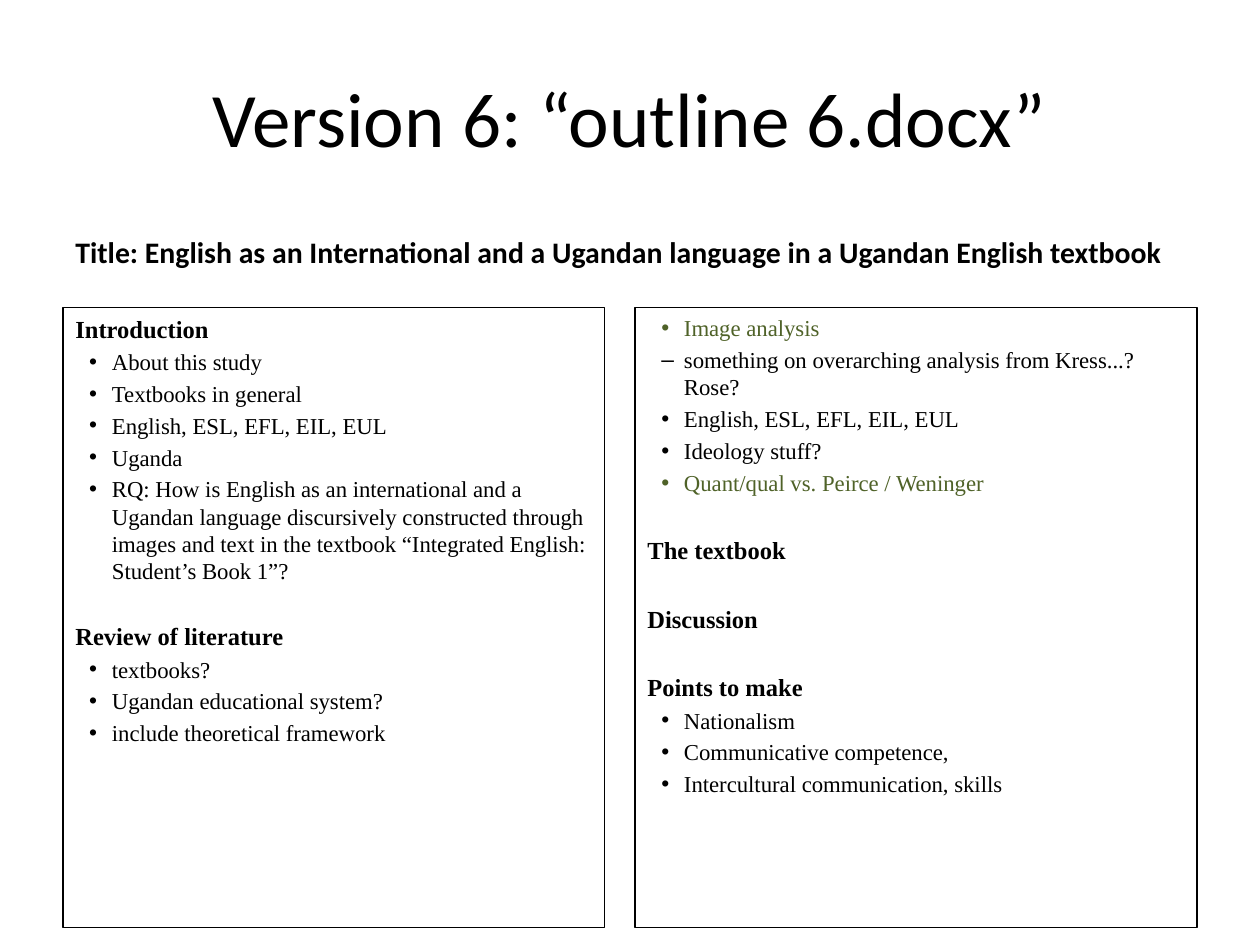
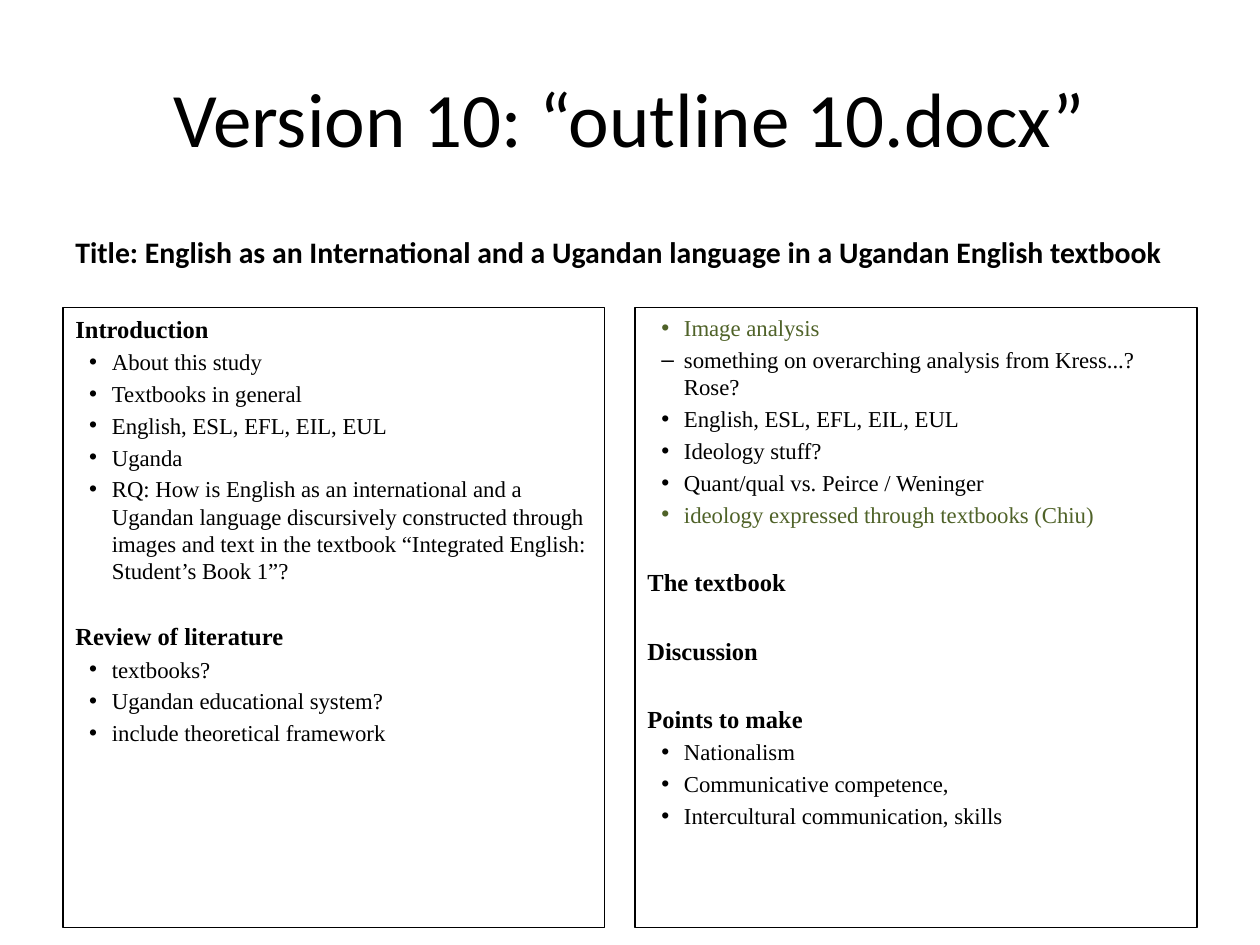
from lxml import etree
from pptx import Presentation
from pptx.dml.color import RGBColor
from pptx.enum.shapes import MSO_SHAPE
from pptx.enum.text import MSO_ANCHOR, PP_ALIGN
from pptx.oxml.ns import qn
from pptx.util import Emu, Inches, Pt

RECTANGLE = MSO_SHAPE.RECTANGLE
TOP, MIDDLE = MSO_ANCHOR.TOP, MSO_ANCHOR.MIDDLE
LEFT, CENTER = PP_ALIGN.LEFT, PP_ALIGN.CENTER
COLUMNS, ROWS = 20, 15
BLACK, GREEN = "000000", "4F6228"
HEADING, POINT, DASH, NEW_POINT = "heading", "point", "dash", "new point"

WORKING_TITLE = ("Title: English as an International and a Ugandan language "
                 "in a Ugandan English textbook")
OPENING_SECTIONS = [
    (HEADING, "Introduction"),
    (POINT, "About this study"),
    (POINT, "Textbooks in general"),
    (POINT, "English, ESL, EFL, EIL, EUL"),
    (POINT, "Uganda"),
    (POINT, "RQ: How is English as an international and a Ugandan language "
            "discursively constructed through images and text in the textbook "
            "“Integrated English: Student’s Book 1”?"),
    (HEADING, "Review of literature"),
    (POINT, "textbooks?"),
    (POINT, "Ugandan educational system?"),
    (POINT, "include theoretical framework"),
]
THEORY = [
    (NEW_POINT, "Image analysis"),
    (DASH, "something on overarching analysis from Kress...? Rose?"),
    (POINT, "English, ESL, EFL, EIL, EUL"),
    (POINT, "Ideology stuff?"),
]
CLOSING_SECTIONS = [
    (HEADING, "The textbook"),
    (HEADING, "Discussion"),
    (HEADING, "Points to make"),
    (POINT, "Nationalism"),
    (POINT, "Communicative competence,"),
    (POINT, "Intercultural communication, skills"),
]
COMPARISON = "Quant/qual vs. Peirce / Weninger"
VERSIONS = [
    (6, [(NEW_POINT, COMPARISON)]),
    (10, [(POINT, COMPARISON),
          (NEW_POINT, "ideology expressed through textbooks (Chiu)")]),
]


def color(value):
    """Turn a hex string into a colour."""
    return RGBColor.from_string(value)


class OutlineDeck:
    """Hold the deck's style and its current slide."""

    title_font = "Calibri"
    outline_font = "Times New Roman"
    heading_size, point_size = 14, 13
    paragraph_gap = 0.2

    def __init__(self):
        """Start an empty deck of ten by seven and a half inches."""
        self.deck = Presentation()
        self.deck.slide_width = Inches(10)
        self.deck.slide_height = Inches(7.5)
        self.slide = None

    def new_slide(self):
        """Add a blank slide and make it current."""
        self.slide = self.deck.slides.add_slide(self.deck.slide_layouts[6])

    def place(self, column, row, columns, rows):
        """Convert grid cells to a left, top, width and height."""
        across = self.deck.slide_width / COLUMNS
        down = self.deck.slide_height / ROWS
        return [Emu(round(length)) for length in
                (column * across, row * down, columns * across, rows * down)]

    def styled_run(self, paragraph, text, font, size, bold=False, ink=BLACK):
        """Add one styled run to a paragraph."""
        run = paragraph.add_run()
        run.text = text
        run.font.name = font
        run.font.size = Pt(size)
        run.font.bold = bold
        run.font.color.rgb = color(ink)

    def line(self, cells, text, size, bold=False, align=LEFT, anchor=TOP):
        """Add a text box that holds one paragraph."""
        frame = self.slide.shapes.add_textbox(*self.place(*cells)).text_frame
        frame.word_wrap = True
        frame.vertical_anchor = anchor
        frame.paragraphs[0].alignment = align
        self.styled_run(frame.paragraphs[0], text, self.title_font, size, bold)

    def bullet(self, paragraph, mark):
        """Give a paragraph a hanging bullet."""
        properties = paragraph._p.get_or_add_pPr()
        properties.set("marL", str(Inches(0.29)))
        properties.set("indent", str(-Inches(0.18)))
        etree.SubElement(properties, qn("a:buFont")).set("typeface", "Arial")
        etree.SubElement(properties, qn("a:buChar")).set("char", mark)

    def outline(self, cells, entries, section_gap):
        """Add a framed outline of headings and bullets."""
        panel = self.slide.shapes.add_shape(RECTANGLE, *self.place(*cells))
        panel.shadow.inherit = False
        panel.fill.background()
        panel.line.color.rgb = color(BLACK)
        panel.line.width = Pt(0.75)
        frame = panel.text_frame
        frame.word_wrap = True
        frame.vertical_anchor = TOP
        for index, (role, text) in enumerate(entries):
            entry = frame.add_paragraph() if index else frame.paragraphs[0]
            entry.alignment = LEFT
            is_heading = role == HEADING
            size = self.heading_size if is_heading else self.point_size
            if index:
                gap = section_gap if is_heading else size * self.paragraph_gap
                entry.space_before = Pt(gap)
            if not is_heading:
                entry.level = int(role == DASH)
                self.bullet(entry, "–" if role == DASH else "•")
            self.styled_run(entry, text, self.outline_font, size, is_heading,
                            GREEN if role == NEW_POINT else BLACK)


def main():
    """Build one slide for each version of the outline."""
    deck = OutlineDeck()
    for version, revisions in VERSIONS:
        deck.new_slide()
        deck.line((1, 0.6, 18, 2.5), f"Version {version}: “outline {version}.docx”",
                  44, align=CENTER, anchor=MIDDLE)
        deck.outline((1, 4.88, 8.6, 9.84), OPENING_SECTIONS, section_gap=21)
        deck.line((1, 3.62, 18, 1.34), WORKING_TITLE, 17, bold=True)
        deck.outline((10.08, 4.88, 8.92, 9.84),
                     THEORY + revisions + CLOSING_SECTIONS, section_gap=22.4)
    deck.deck.save("out.pptx")


if __name__ == "__main__":
    main()
